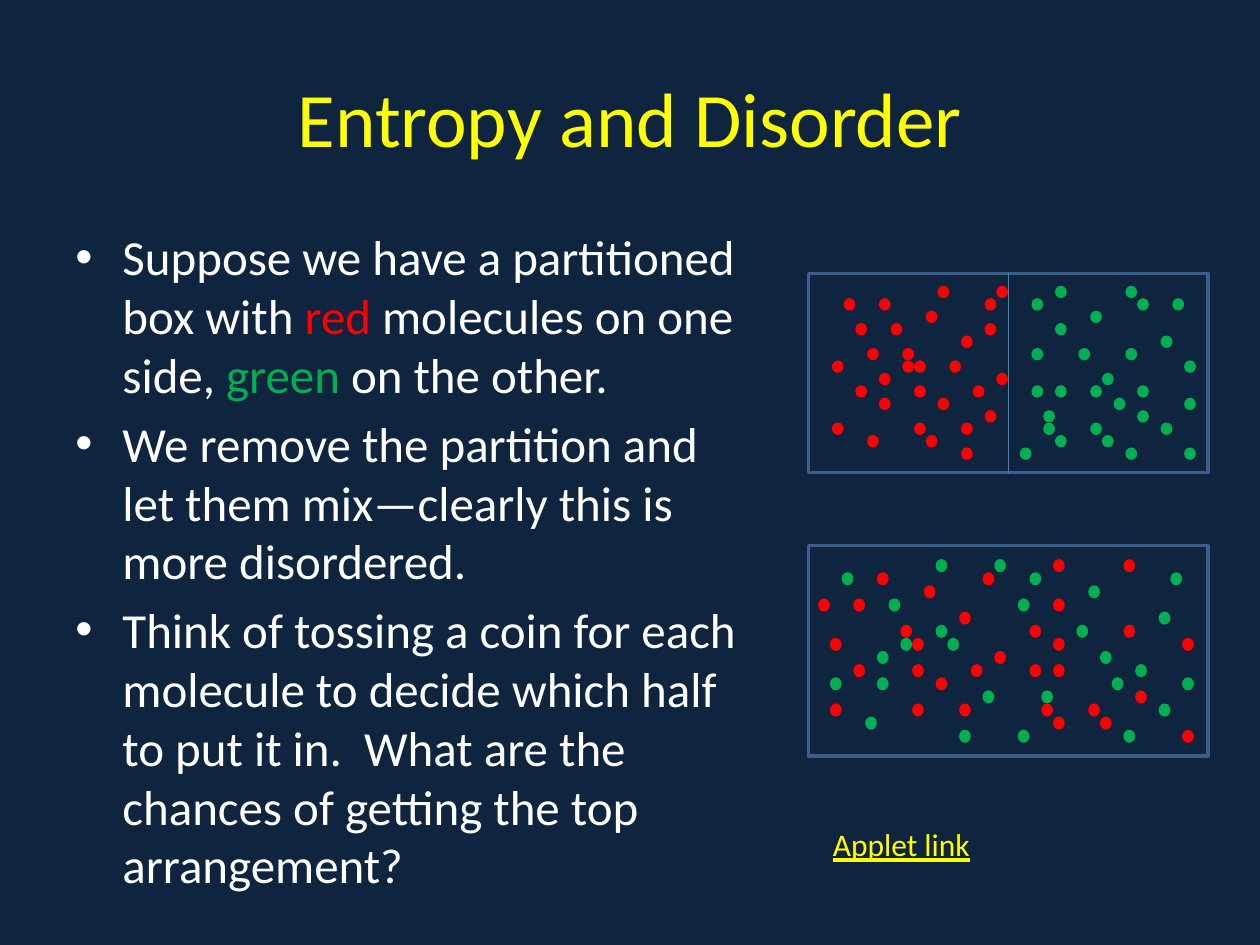
from lxml.etree import SubElement
from pptx import Presentation
from pptx.dml.color import RGBColor as Rgb
from pptx.enum.shapes import MSO_CONNECTOR as Link, MSO_SHAPE as Form
from pptx.enum.text import MSO_ANCHOR as Anchor, PP_ALIGN as Align
from pptx.oxml.ns import qn
from pptx.util import Cm, Pt

HUES = {
    "navy": "0F243E", "yellow": "FFFF00", "white": "FFFFFF",
    "red": "FF0000", "green": "00B050", "frame": "3A5F8C", "wall": "4B7EBC",
}

deck = Presentation()
deck.slide_width, deck.slide_height = Cm(25.4), Cm(19.05)
slide = deck.slides.add_slide(deck.slide_layouts[6])
slide.background.fill.solid()
slide.background.fill.fore_color.rgb = Rgb.from_string(HUES["navy"])


def add_box(spot, form):
    frame = slide.shapes.add_textbox(*map(Cm, spot)).text_frame
    for key, value in {"word_wrap": True, **form}.items():
        setattr(frame, key, value)
    return frame


def add_run(para, words, hue, form):
    run = para.add_run()
    run.text = words
    for key, value in {"name": "Calibri", **form}.items():
        setattr(run.font, key, value)
    run.font.color.rgb = Rgb.from_string(HUES[hue])


title = add_box((1.27, 0.76, 22.86, 3.18), {"vertical_anchor": Anchor.MIDDLE})
title.paragraphs[0].alignment = Align.CENTER
add_run(title.paragraphs[0], "Entropy and Disorder", "yellow", {"size": Pt(44)})

points = [
    [("Suppose we have a partitioned box with ", "white"), ("red", "red"),
     (" molecules on one side, ", "white"), ("green", "green"),
     (" on the other.", "white")],
    [("We remove the partition and let them mix—clearly this is more disordered.",
      "white")],
    [("Think of tossing a coin for each molecule to decide which half to put it in.  "
      "What are the chances of getting the top arrangement?", "white")],
]
body = add_box((1.27, 4.45, 14.17, 13.97), {})
for rank, point in enumerate(points):
    para = body.add_paragraph() if rank else body.paragraphs[0]
    para.space_before = Pt(5.6)
    props = para._p.get_or_add_pPr()
    for key, value in {"marL": Cm(0.95), "indent": -Cm(0.95)}.items():
        props.set(key, str(value))
    SubElement(props, qn("a:buFont")).set("typeface", "Arial")
    SubElement(props, qn("a:buChar")).set("char", "•")
    for words, hue in point:
        add_run(para, words, hue, {"size": Pt(28)})

boxes = [
    {"frame": (16.3, 5.51, 8.05, 4.02), "first": (16.77, 5.76), "span": (7.1, 3.26),
     "wall": True,
     "red": [[9, 14], [1, 4, 13], [8], [2, 5, 13], [11], [3, 6], [0, 6, 7, 10],
             [4, 14], [2, 7, 12], [4, 9], [13], [0, 7, 11], [3, 8], [11]],
     "green": [[19, 25], [17, 26, 29], [22], [19], [28], [17, 21, 25], [30],
               [23], [17, 19, 22, 26], [24, 30], [18, 26], [18, 22, 28],
               [19, 23], [16, 25, 30]]},
    {"frame": (16.3, 11, 8.05, 4.24), "first": (16.73, 11.27), "span": (7.1, 3.44),
     "wall": False,
     "red": [[19, 25], [4, 13], [8], [-1, 2, 19], [11], [6, 17, 25],
             [0, 7, 19, 30], [14], [2, 7, 12, 17, 19], [9], [26],
             [0, 7, 11, 18, 22], [19, 23], [30]],
     "green": [[9, 14], [1, 17, 29], [22], [5, 16], [28], [9, 21], [6, 10],
               [4, 23], [26], [0, 4, 24, 30], [13, 18], [28], [3],
               [11, 16, 25]]},
]
for box in boxes:
    group = slide.shapes.add_group_shape().shapes
    left, top, width, height = box["frame"]
    frame = group.add_shape(Form.RECTANGLE, *map(Cm, box["frame"]))
    frame.shadow.inherit = False
    frame.fill.background()
    frame.line.width = Pt(2)
    frame.line.color.rgb = Rgb.from_string(HUES["frame"])
    if box["wall"]:
        mid = left + width / 2
        wall = group.add_connector(
            Link.STRAIGHT, Cm(mid), Cm(top), Cm(mid), Cm(top + height))
        wall.line.width = Pt(0.75)
        wall.line.color.rgb = Rgb.from_string(HUES["wall"])
        SubElement(wall._element.spPr, qn("a:effectLst"))
    x, y = box["first"]
    across, down = box["span"][0] / 30, box["span"][1] / 13
    for hue in ("red", "green"):
        for row, cols in enumerate(box[hue]):
            for col in cols:
                dot = group.add_shape(
                    Form.OVAL, Cm(x + col * across), Cm(y + row * down),
                    Cm(across), Cm(down))
                dot.shadow.inherit = False
                dot.fill.solid()
                dot.fill.fore_color.rgb = Rgb.from_string(HUES[hue])
                dot.line.fill.background()

label = add_box((16.54, 16.51, 3.56, 1.02), {})
add_run(label.paragraphs[0], "Applet link", "yellow",
        {"size": Pt(18), "underline": True})

deck.save("out.pptx")
